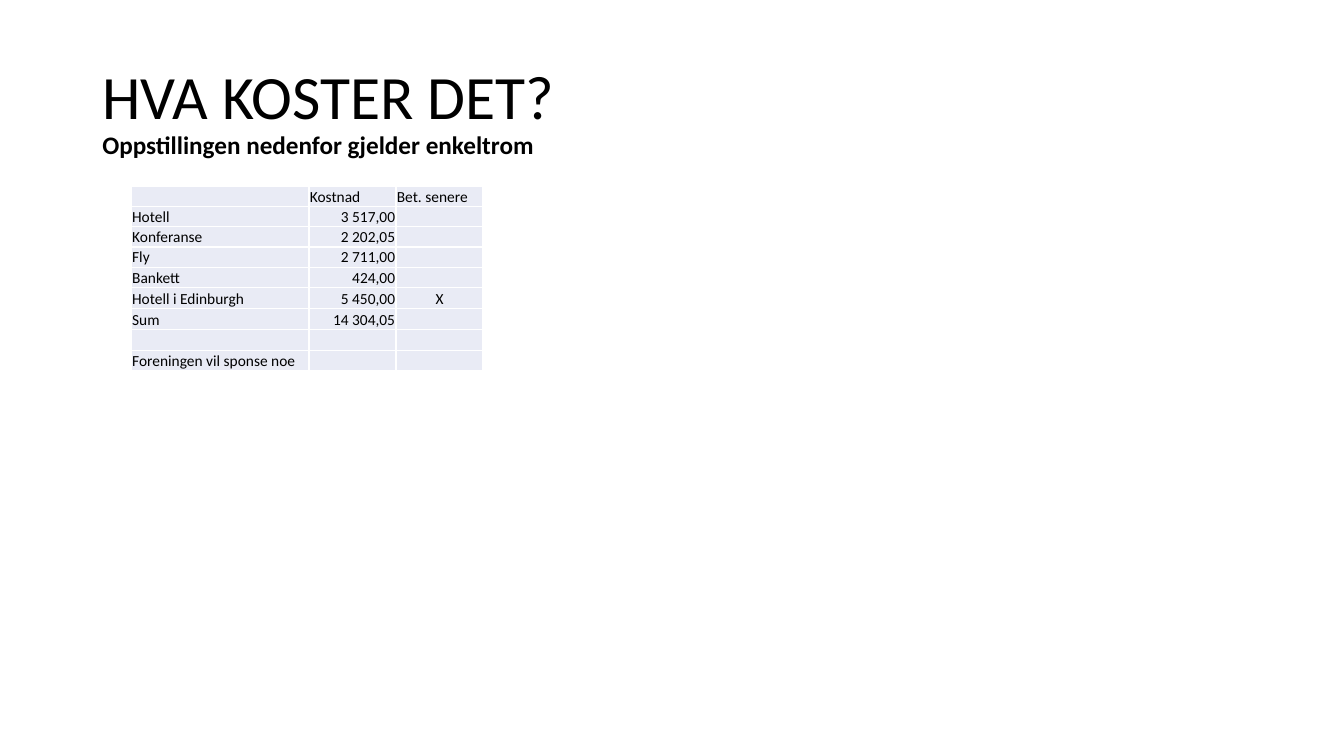
from dataclasses import dataclass

from lxml.etree import SubElement
from pptx import Presentation
from pptx.dml.color import RGBColor
from pptx.enum.text import MSO_ANCHOR, PP_ALIGN
from pptx.oxml.ns import qn
from pptx.slide import Slide
from pptx.table import _Cell
from pptx.text.text import Font
from pptx.util import Pt

BLACK = RGBColor(0x00, 0x00, 0x00)
WHITE = RGBColor(0xFF, 0xFF, 0xFF)
PALE_BLUE = RGBColor(0xE9, 0xEB, 0xF5)
FONT_NAME = "Calibri"
TABLE_SIZE = Pt(11)
COLUMN_WIDTHS = (Pt(126.9), Pt(62.2), Pt(62.2))
COLUMN_ALIGNMENTS = (PP_ALIGN.LEFT, PP_ALIGN.RIGHT, PP_ALIGN.CENTER)
ROW_HEIGHT = Pt(14.4)
TALL_ROW_HEIGHT = Pt(15)


@dataclass(frozen=True)
class CostRow:
    label: str = ""
    cost: str = ""
    paid_later: str = ""
    height: Pt = ROW_HEIGHT


COST_ROWS = (
    CostRow("", "Kostnad", "Bet. senere"),
    CostRow("Hotell", "3 517,00"),
    CostRow("Konferanse", "2 202,05"),
    CostRow("Fly", "2 711,00"),
    CostRow("Bankett", "424,00"),
    CostRow("Hotell i Edinburgh", "5 450,00", "X", TALL_ROW_HEIGHT),
    CostRow("Sum", "14 304,05", height=TALL_ROW_HEIGHT),
    CostRow(height=TALL_ROW_HEIGHT),
    CostRow("Foreningen vil sponse noe"),
)


def style_font(font: Font, size: Pt, bold: bool = False) -> None:
    font.name = FONT_NAME
    font.size = size
    font.bold = bold
    font.color.rgb = BLACK


def add_title(slide: Slide) -> None:
    box = slide.shapes.add_textbox(Pt(66), Pt(28.75), Pt(828), Pt(104.4))
    frame = box.text_frame
    frame.word_wrap = True
    frame.vertical_anchor = MSO_ANCHOR.MIDDLE
    para = frame.paragraphs[0]
    para.text = "HVA KOSTER DET?\vOppstillingen nedenfor gjelder enkeltrom"
    para.line_spacing = 0.9
    heading, subheading = para.runs
    style_font(heading.font, Pt(44))
    style_font(subheading.font, Pt(18), bold=True)


def add_borders(cell: _Cell) -> None:
    properties = cell._tc.get_or_add_tcPr()
    for side in ("a:lnL", "a:lnR", "a:lnT", "a:lnB"):
        line = SubElement(properties, qn(side), w=str(Pt(1)))
        fill = SubElement(line, qn("a:solidFill"))
        SubElement(fill, qn("a:srgbClr"), val=str(WHITE))


def fill_cell(cell: _Cell, text: str, alignment: PP_ALIGN) -> None:
    add_borders(cell)
    cell.fill.solid()
    cell.fill.fore_color.rgb = PALE_BLUE
    cell.margin_left = cell.margin_right = cell.margin_top = Pt(0.6)
    cell.margin_bottom = Pt(0)
    cell.vertical_anchor = MSO_ANCHOR.BOTTOM
    para = cell.text_frame.paragraphs[0]
    para.text = text
    para.alignment = alignment
    for span in para.runs:
        style_font(span.font, TABLE_SIZE)
    if not text:
        SubElement(para._p, qn("a:endParaRPr"), sz=str(int(TABLE_SIZE.pt * 100)))


def add_cost_table(slide: Slide) -> None:
    width = sum(COLUMN_WIDTHS)
    height = sum(row.height for row in COST_ROWS)
    frame = slide.shapes.add_table(
        len(COST_ROWS), len(COLUMN_WIDTHS), Pt(93.8), Pt(133.2), width, height
    )
    table = frame.table
    table.first_row = False
    table.horz_banding = False
    for column, column_width in zip(table.columns, COLUMN_WIDTHS):
        column.width = column_width
    for row_index, cost_row in enumerate(COST_ROWS):
        table.rows[row_index].height = cost_row.height
        texts = (cost_row.label, cost_row.cost, cost_row.paid_later)
        for column_index, text in enumerate(texts):
            alignment = COLUMN_ALIGNMENTS[column_index] if row_index else PP_ALIGN.LEFT
            fill_cell(table.cell(row_index, column_index), text, alignment)


def main() -> None:
    deck = Presentation()
    deck.slide_width = Pt(960)
    deck.slide_height = Pt(540)
    page = deck.slides.add_slide(deck.slide_layouts[6])
    add_title(page)
    add_cost_table(page)
    deck.save("out.pptx")


if __name__ == "__main__":
    main()
